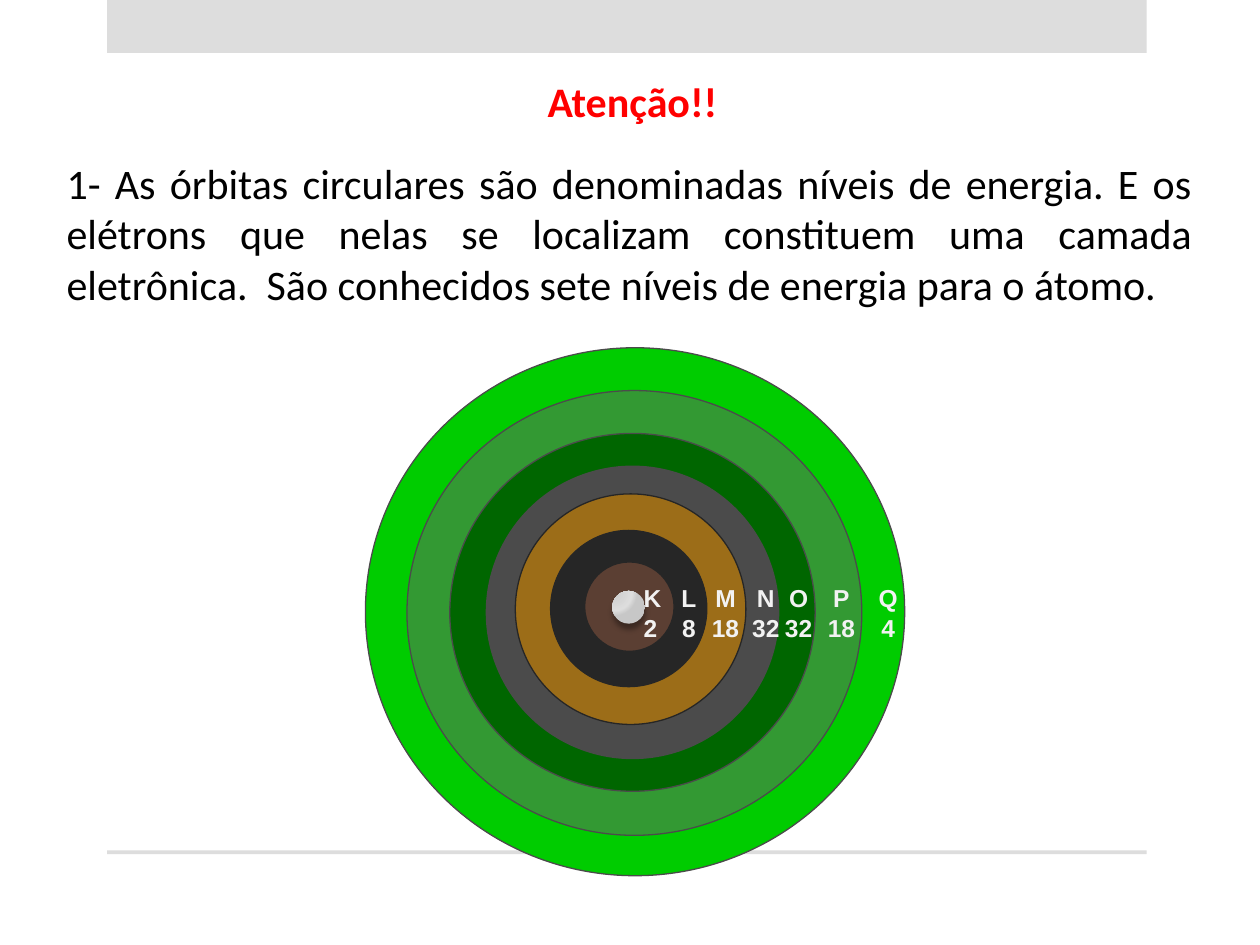
from lxml.etree import SubElement
from pptx import Presentation
from pptx.dml.color import RGBColor
from pptx.enum.shapes import MSO_SHAPE
from pptx.enum.text import MSO_ANCHOR, MSO_AUTO_SIZE, PP_ALIGN
from pptx.oxml import parse_xml
from pptx.oxml.ns import nsdecls, qn
from pptx.util import Inches, Pt

BAR_GREY = RGBColor(0xDD, 0xDD, 0xDD)
RED = RGBColor(0xFF, 0x00, 0x00)
BLACK = RGBColor(0x00, 0x00, 0x00)
LABEL_WHITE = RGBColor(0xF2, 0xF2, 0xF2)
GREY = RGBColor(0x4B, 0x4B, 0x4B)
DARK = RGBColor(0x26, 0x26, 0x26)
LIME = RGBColor(0x00, 0xCC, 0x00)
GREEN = RGBColor(0x33, 0x99, 0x33)
FOREST = RGBColor(0x00, 0x66, 0x00)
OCHRE = RGBColor(0x9C, 0x6D, 0x18)
BROWN = RGBColor(0x5B, 0x3F, 0x33)

BARS = [(0.85, 0, 8.25, 0.42), (0.85, 6.75, 8.25, 0.03)]
SHELLS = [
    ((2.9, 2.76, 4.28, 4.19), LIME, GREY),
    ((3.23, 3.1, 3.61, 3.53), GREEN, GREY),
    ((3.57, 3.44, 2.9, 2.84), FOREST, GREY),
    ((3.86, 3.7, 2.32, 2.32), GREY, GREY),
    ((4.09, 3.92, 1.83, 1.83), OCHRE, DARK),
    ((4.37, 4.21, 1.24, 1.24), DARK, DARK),
    ((4.64, 4.46, 0.71, 0.71), BROWN, DARK),
]
NUCLEUS = (4.86, 4.69, 0.26, 0.26)
SHELL_NAMES = "KLMNOPQ"
ELECTRONS = [2, 8, 18, 32, 32, 18, 4]
LABEL_STOPS = [0.36, 0.65, 0.97, 1.23, 1.57, 1.94]
STATEMENT = (
    "1- As órbitas circulares são denominadas níveis de energia. "
    "E os elétrons que nelas se localizam constituem uma camada eletrônica.  "
    "São conhecidos sete níveis de energia para o átomo."
)

TITLE_FONT = {"name": "Calibri", "size": Pt(24), "bold": True}
BODY_FONT = {"name": "Calibri", "size": Pt(24), "bold": False}
LABEL_FONT = {"name": "Arial", "size": Pt(14), "bold": True}

NUCLEUS_FILL = f"""<a:gradFill {nsdecls("a")} rotWithShape="1"><a:gsLst>
<a:gs pos="0"><a:srgbClr val="CDCDCD"/></a:gs>
<a:gs pos="76000"><a:srgbClr val="DDDDDD"/></a:gs>
<a:gs pos="100000"><a:srgbClr val="C7C7C7"/></a:gs></a:gsLst>
<a:path path="circle"><a:fillToRect l="15000" t="15000" r="100000" b="100000"/></a:path>
</a:gradFill>"""
NUCLEUS_SHADOW = f"""<a:effectLst {nsdecls("a")}>
<a:outerShdw blurRad="38100" dist="38100" dir="5400000" rotWithShape="0">
<a:srgbClr val="000000"><a:alpha val="35000"/></a:srgbClr></a:outerShdw></a:effectLst>"""


def place(box, area):
    """Move and size a box to an area in inches."""
    for name, value in zip(("left", "top", "width", "height"), area):
        setattr(box, name, Inches(value))


def write_text(box, lines, font, color, align):
    """Write one formatted paragraph per line."""
    frame = box.text_frame
    frame.word_wrap = True
    frame.auto_size = MSO_AUTO_SIZE.SHAPE_TO_FIT_TEXT
    frame.vertical_anchor = MSO_ANCHOR.TOP
    frame.text = "\n".join(lines)
    for para in frame.paragraphs:
        para.alignment = align
        for span in para.runs:
            for name, value in font.items():
                setattr(span.font, name, value)
            span.font.color.rgb = color


def add_text(shapes, area, lines, font, color, align):
    """Add a text box and return it."""
    box = shapes.add_textbox(*map(Inches, area))
    write_text(box, lines, font, color, align)
    return box


def add_solid(shapes, kind, area, fill, line=None):
    """Add a flat shape with an optional thin outline."""
    shape = shapes.add_shape(kind, *map(Inches, area))
    shape.shadow.inherit = False
    shape.fill.solid()
    shape.fill.fore_color.rgb = fill
    if line is None:
        shape.line.fill.background()
    else:
        shape.line.color.rgb = line
        shape.line.width = Pt(0.75)
    return shape


def add_nucleus(shapes):
    """Add the shaded nucleus with its soft shadow."""
    nucleus = add_solid(shapes, MSO_SHAPE.OVAL, NUCLEUS, BAR_GREY)
    properties = nucleus.element.spPr
    for tag, xml in (("a:solidFill", NUCLEUS_FILL), ("a:effectLst", NUCLEUS_SHADOW)):
        properties.replace(properties.find(qn(tag)), parse_xml(xml))


def add_labels(shapes):
    """Add shell names above electron counts, aligned at centred tab stops."""
    rows = ["\t".join(map(str, row)) for row in (SHELL_NAMES, ELECTRONS)]
    box = add_text(shapes, (5.01, 4.58, 2.23, 0.57), rows, LABEL_FONT, LABEL_WHITE, PP_ALIGN.LEFT)
    for para in box.text_frame.paragraphs:
        stops = SubElement(para._p.get_or_add_pPr(), qn("a:tabLst"))
        for stop in LABEL_STOPS:
            SubElement(stops, qn("a:tab"), pos=str(Inches(stop)), algn="ctr")


def add_atom(page):
    """Group the energy shells, the nucleus and the labels."""
    atom = page.shapes.add_group_shape()
    for area, fill, line in SHELLS:
        add_solid(atom.shapes, MSO_SHAPE.OVAL, area, fill, line)
    add_nucleus(atom.shapes)
    add_labels(atom.shapes)


def main():
    """Build and save the slide."""
    deck = Presentation()
    deck.slide_width, deck.slide_height = Inches(10), Inches(7.5)
    page = deck.slides.add_slide(deck.slide_layouts[5])
    for area in BARS:
        add_solid(page.shapes, MSO_SHAPE.RECTANGLE, area, BAR_GREY)
    title = page.shapes.title
    place(title, (1.32, 0.55, 7.4, 0.51))
    write_text(title, ["Atenção!!"], TITLE_FONT, RED, PP_ALIGN.CENTER)
    add_text(page.shapes, (0.43, 1.2, 9.13, 1.62), [STATEMENT], BODY_FONT, BLACK, PP_ALIGN.JUSTIFY)
    add_atom(page)
    deck.save("out.pptx")


if __name__ == "__main__":
    main()
